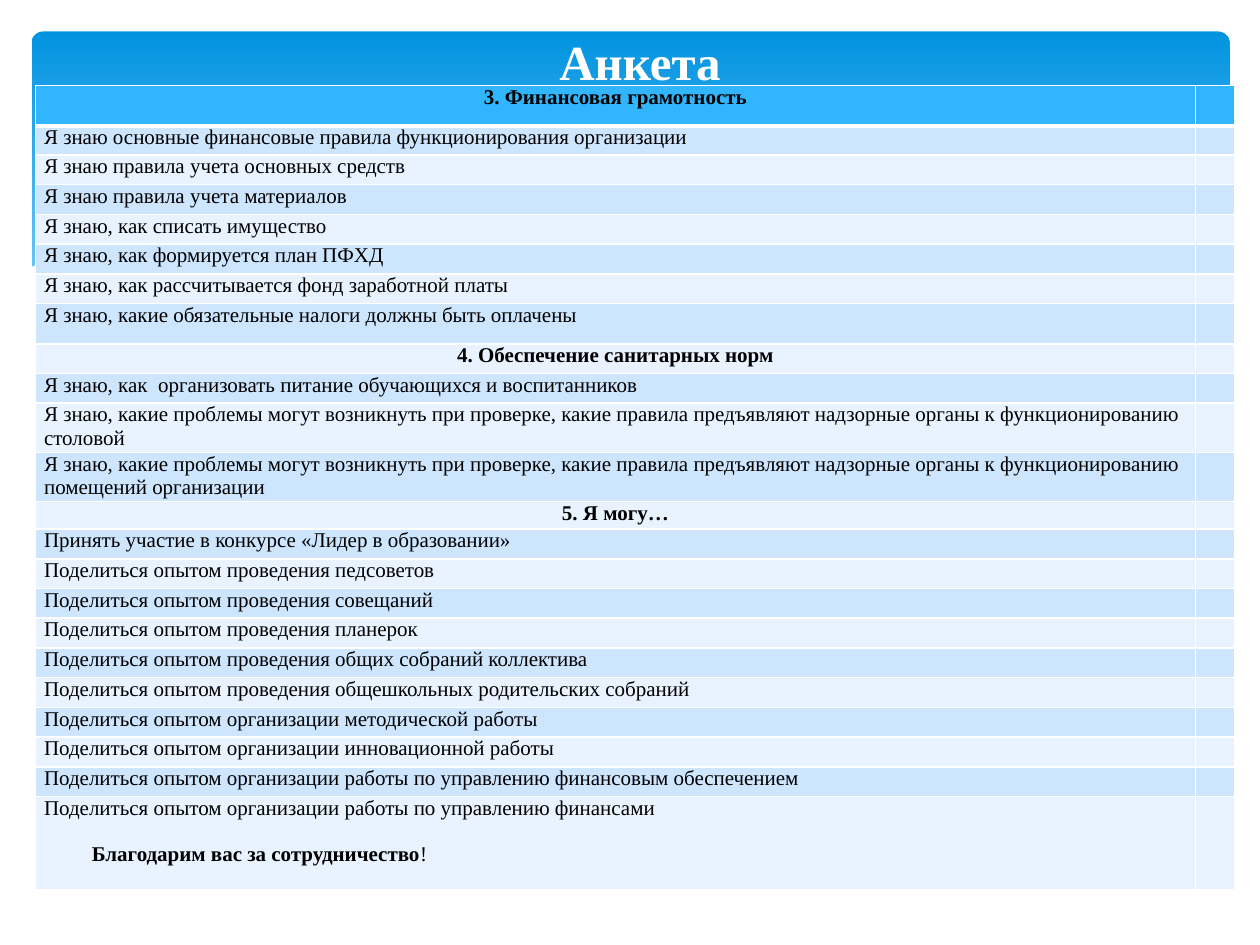
import pptx
import pptx.dml.color
import pptx.enum.shapes
import pptx.enum.text
import pptx.oxml
import pptx.oxml.ns
import pptx.util

Inches = pptx.util.Inches
Pt = pptx.util.Pt
RGBColor = pptx.dml.color.RGBColor
Align = pptx.enum.text.PP_ALIGN

WHITE = RGBColor(0xFF, 0xFF, 0xFF)
BLACK = RGBColor(0, 0, 0)
BANNER_TOP = RGBColor(0x02, 0x93, 0xE0)
BANNER_BOTTOM = RGBColor(0x83, 0xD3, 0xFE)
HEADER = RGBColor(0x31, 0xB6, 0xFD)
BANDS = (RGBColor(0xE8, 0xF3, 0xFF), RGBColor(0xCE, 0xE5, 0xFE))
FONT = "Times New Roman"
TEXT_SIZE = 12

REGULAR = Inches(2.36) // 10
KNOW = "Я знаю, какие проблемы могут возникнуть при проверке, какие правила предъявляют надзорные органы к функционированию "
SHARE = "Поделиться опытом "
SECTIONS = [
    ("3. Финансовая грамотность", [
        "Я знаю основные финансовые правила функционирования организации",
        "Я знаю правила учета основных средств",
        "Я знаю правила учета материалов",
        "Я знаю, как списать имущество",
        "Я знаю, как формируется план ПФХД",
        "Я знаю, как рассчитывается фонд заработной платы",
        "Я знаю, какие обязательные налоги должны быть оплачены",
    ]),
    ("4. Обеспечение санитарных норм", [
        "Я знаю, как  организовать питание обучающихся и воспитанников",
        KNOW + "столовой",
        KNOW + "помещений организации",
    ]),
    ("5. Я могу…", [
        "Принять участие в конкурсе «Лидер в образовании»",
        SHARE + "проведения педсоветов",
        SHARE + "проведения совещаний",
        SHARE + "проведения планерок",
        SHARE + "проведения общих собраний коллектива",
        SHARE + "проведения общешкольных родительских собраний",
        SHARE + "организации методической работы",
        SHARE + "организации инновационной работы",
        SHARE + "организации работы по управлению финансовым обеспечением",
        SHARE + "организации работы по управлению финансами",
    ]),
]
SPECIAL_HEIGHTS = {0: 0.32, 1: 0.23, 7: 0.32, 10: 0.39, 11: 0.39, 12: 0.22, 22: 0.74}
WAVE = [
    (9.77, 2.46), (9.3, 2.62), (8.75, 2.73), (8.09, 2.77), (7.26, 2.72),
    (6.48, 2.62), (5.55, 2.45), (4.47, 2.2), (3.65, 2.02), (2.92, 1.9),
    (2.3, 1.85), (1.77, 1.84), (1.32, 1.86), (0.95, 1.91), (0.67, 1.97),
    (0.46, 2.03), (0.29, 2.1), (0.23, 2.13), (0.23, 3.29), (9.77, 3.29),
]


def write(para, text, size=TEXT_SIZE, color=BLACK, bold=False, align=Align.LEFT):
    para.alignment = align
    span = para.add_run()
    span.text = text
    span.font.name = FONT
    span.font.size = Pt(size)
    span.font.bold = bold
    span.font.color.rgb = color


def add_banner(page, left, top, width, height):
    """Gradient panel whose lower part is cut off by a white wave."""
    box = page.shapes.add_shape(
        pptx.enum.shapes.MSO_SHAPE.ROUNDED_RECTANGLE, left, top, width, height)
    box.adjustments[0] = 0.034
    box.shadow.inherit = False
    box.line.fill.background()
    box.fill.gradient()
    box.fill.gradient_angle = 270
    first, last = box.fill.gradient_stops
    first.color.rgb, first.position = BANNER_TOP, 0
    last.color.rgb, last.position = BANNER_BOTTOM, 0.9

    points = [(Inches(x), Inches(y)) for x, y in WAVE]
    builder = page.shapes.build_freeform(*points[0])
    builder.add_line_segments(points[1:], close=True)
    wave = builder.convert_to_shape()
    wave.shadow.inherit = False
    wave.fill.solid()
    wave.fill.fore_color.rgb = WHITE
    wave.line.fill.background()


def format_cell(cell, color, bottom_width):
    cell.margin_left = cell.margin_right = Inches(0.07)
    cell.margin_top = cell.margin_bottom = 0
    properties = cell._tc.get_or_add_tcPr()
    for side in "LRTB":
        width = Pt(bottom_width if side == "B" else 1)
        properties.append(pptx.oxml.parse_xml(
            f'<a:ln{side} {pptx.oxml.ns.nsdecls("a")} w="{width}">'
            f'<a:solidFill><a:srgbClr val="{WHITE}"/></a:solidFill></a:ln{side}>'))
    cell.fill.solid()
    cell.fill.fore_color.rgb = color


def add_thanks(cell):
    para = cell.text_frame.add_paragraph()
    para.space_before = Pt(13)
    write(para, "Благодарим вас за сотрудничество", bold=True, align=Align.JUSTIFY)
    write(para, "!", align=Align.JUSTIFY)
    para._p.get_or_add_pPr().set("indent", str(Inches(0.38)))


def add_questionnaire(page, left, top, width, height):
    rows = [row for heading, items in SECTIONS
            for row in [(heading, True)] + [(item, False) for item in items]]
    table = page.shapes.add_table(len(rows), 2, left, top, width, height).table
    answer_width = Inches(0.31)
    table.columns[0].width = width - answer_width
    table.columns[1].width = answer_width
    for index, (text, is_heading) in enumerate(rows):
        special = SPECIAL_HEIGHTS.get(index)
        table.rows[index].height = Inches(special) if special else REGULAR
        question, answer = table.cell(index, 0), table.cell(index, 1)
        for cell in (question, answer):
            format_cell(cell, BANDS[index % 2] if index else HEADER,
                        1 if index else 3)
        write(question.text_frame.paragraphs[0], text, bold=is_heading,
              align=Align.CENTER if is_heading else Align.LEFT)
        # Empty cells need a small size too, or they stretch their row.
        end = answer.text_frame.paragraphs[0]._p.get_or_add_endParaRPr()
        end.set("sz", str(TEXT_SIZE * 100))
    add_thanks(question)


def place_title(page, left, top, width, height):
    title = page.shapes.title
    title.left, title.top, title.width, title.height = left, top, width, height
    title.text_frame.vertical_anchor = pptx.enum.text.MSO_ANCHOR.MIDDLE
    write(title.text_frame.paragraphs[0], "Анкета", size=28, color=WHITE,
          bold=True, align=Align.CENTER)
    page.shapes._spTree.append(title._element)  # in front of the banner


def main():
    deck = pptx.Presentation()
    deck.slide_width, deck.slide_height = Inches(10), Inches(7.5)
    page = deck.slides.add_slide(deck.slide_layouts[5])
    add_banner(page, Inches(0.25), Inches(0.25), Inches(9.51), Inches(2.7))
    add_questionnaire(page, Inches(0.28), Inches(0.68), Inches(9.52), Inches(6.39))
    place_title(page, Inches(3.27), Inches(0.21), Inches(3.62), Inches(0.55))
    deck.save("out.pptx")


if __name__ == "__main__":
    main()
